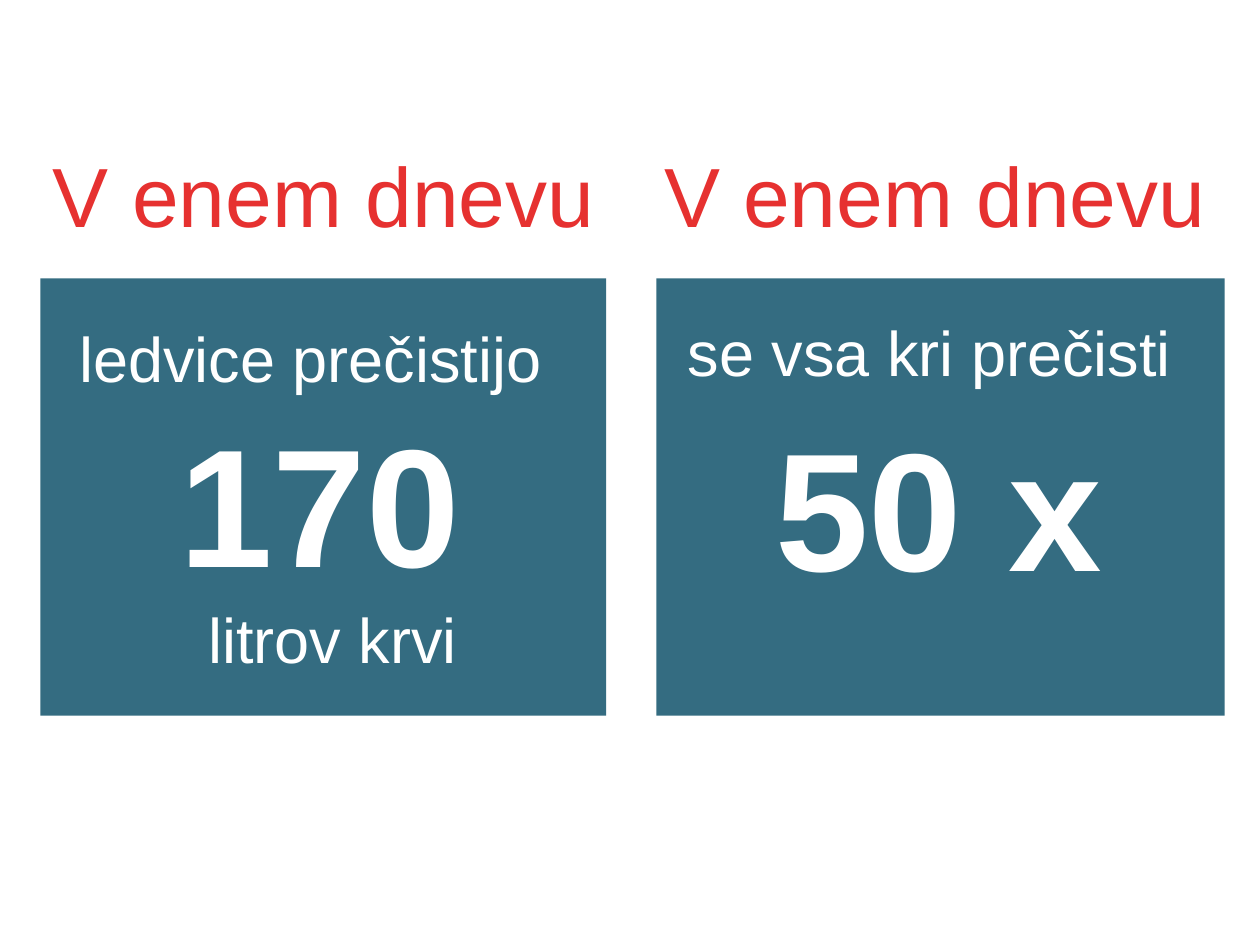
from dataclasses import dataclass

from pptx import Presentation
from pptx.dml.color import RGBColor
from pptx.enum.shapes import MSO_SHAPE
from pptx.enum.text import MSO_AUTO_SIZE, PP_ALIGN
from pptx.shapes.shapetree import GroupShapes, SlideShapes
from pptx.util import Pt

TEAL = RGBColor(0x34, 0x6C, 0x81)
RED = RGBColor(0xE6, 0x31, 0x30)
WHITE = RGBColor(0xFF, 0xFF, 0xFF)
FONT = "Arial"
HEADING = "V enem dnevu"


@dataclass(frozen=True)
class Box:
    left: float
    top: float
    width: float
    height: float

    def lengths(self) -> tuple[Pt, Pt, Pt, Pt]:
        return Pt(self.left), Pt(self.top), Pt(self.width), Pt(self.height)


@dataclass(frozen=True)
class Span:
    text: str
    size: float
    color: RGBColor = WHITE
    bold: bool = False


@dataclass(frozen=True)
class Fact:
    panel: Box
    heading: Box
    figure: Box
    lines: tuple[tuple[Span, ...], ...]
    intro: Box
    intro_text: str


FACTS = (
    Fact(
        panel=Box(23.04, 159.12, 323.28, 249.84),
        heading=Box(14.4, 78.48, 341.28, 65.52),
        figure=Box(28.08, 224.64, 324, 167.04),
        lines=(
            (Span("170", 96, bold=True), Span(" ", 54, RED)),
            (Span("litrov krvi", 36),),
        ),
        intro=Box(38.16, 179.28, 312.48, 51.12),
        intro_text="ledvice prečistijo",
    ),
    Fact(
        panel=Box(375.12, 159.12, 324.72, 249.84),
        heading=Box(362.88, 78.48, 342.72, 65.52),
        figure=Box(374.4, 226.8, 324, 123.84),
        lines=((Span("50 x", 96, bold=True),),),
        intro=Box(385.92, 175.68, 318.96, 51.12),
        intro_text="se vsa kri prečisti",
    ),
)


def add_panel(shapes: GroupShapes, box: Box) -> None:
    sp = shapes.add_shape(MSO_SHAPE.RECTANGLE, *box.lengths())
    sp.shadow.inherit = False
    sp.fill.solid()
    sp.fill.fore_color.rgb = TEAL
    sp.line.fill.background()


def add_text(
    shapes: SlideShapes | GroupShapes,
    box: Box,
    lines: tuple[tuple[Span, ...], ...],
    align: PP_ALIGN = PP_ALIGN.CENTER,
) -> None:
    """Add one paragraph whose lines are parted by line breaks."""
    tf = shapes.add_textbox(*box.lengths()).text_frame
    tf.word_wrap = True
    tf.auto_size = MSO_AUTO_SIZE.SHAPE_TO_FIT_TEXT
    p = tf.paragraphs[0]
    p.alignment = align
    p.font.name = FONT
    for i, line in enumerate(lines):
        if i:
            p.add_line_break()
        for span in line:
            r = p.add_run()
            r.text = span.text
            r.font.name = FONT
            r.font.size = Pt(span.size)
            r.font.bold = span.bold
            r.font.color.rgb = span.color


def main() -> None:
    prs = Presentation()
    prs.slide_width, prs.slide_height = Pt(720), Pt(540)
    s = prs.slides.add_slide(prs.slide_layouts[6])
    for fact in FACTS:
        group = s.shapes.add_group_shape().shapes
        add_panel(group, fact.panel)
        add_text(group, fact.heading, ((Span(HEADING, 48, RED),),))
        add_text(group, fact.figure, fact.lines)
    for fact in FACTS:
        intro = ((Span(fact.intro_text, 36),),)
        add_text(s.shapes, fact.intro, intro, PP_ALIGN.LEFT)
    prs.save("out.pptx")


if __name__ == "__main__":
    main()
